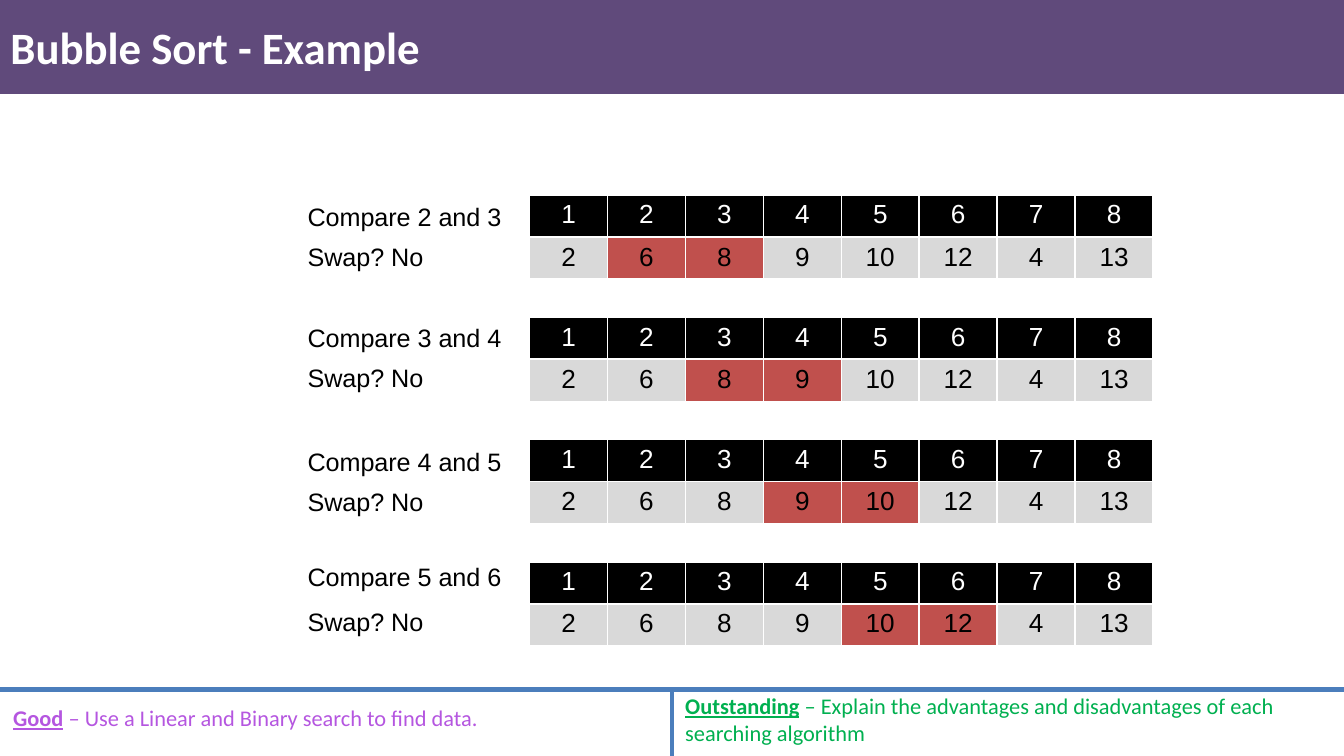
from pptx import Presentation
from pptx import util as u
from pptx.dml.color import RGBColor
from pptx.enum import shapes, text
from pptx.oxml import parse_xml
from pptx.oxml.ns import nsdecls

INDEXES = [1, 2, 3, 4, 5, 6, 7, 8]
VALUES = [2, 6, 8, 9, 10, 12, 4, 13]
# Tops of the "Compare" and "Swap?" labels for each step
LABEL_TOPS = [(1.45, 1.75), (2.35, 2.65), (3.27, 3.57), (4.13, 4.46)]
TABLE_TOP, TABLE_STEP = 1.45, 0.91


def color(code):
    return RGBColor.from_string(code)


class SlideBuilder:
    PURPLE, BLUE, BLACK, WHITE = "604A7B", "4B7EBC", "000000", "FFFFFF"
    GRAY, RED, VIOLET, GREEN = "D9D9D9", "C0504D", "B556E0", "00B050"
    HEADING_FONT, BODY_FONT = "Calibri", "Arial"

    def __init__(self, page):
        self.page = page

    def add_span(self, para, words, font, size, code, bold=False, underline=False):
        span = para.add_run()
        span.text = words
        span.font.name = font
        span.font.size = u.Pt(size)
        span.font.color.rgb = color(code)
        span.font.bold = bold
        span.font.underline = underline

    def add_text(self, left, top, width, height, spans, font, size, code,
                 anchor=text.MSO_ANCHOR.TOP, grow=True):
        """Add a text box; spans are (words, bold, underline) tuples."""
        box = self.page.shapes.add_textbox(
            u.Inches(left), u.Inches(top), u.Inches(width), u.Inches(height))
        frame = box.text_frame
        frame.word_wrap = True
        frame.vertical_anchor = anchor
        if grow:
            frame.auto_size = text.MSO_AUTO_SIZE.SHAPE_TO_FIT_TEXT
        for words, bold, underline in spans:
            self.add_span(frame.paragraphs[0], words, font, size, code, bold, underline)

    def add_goal(self, left, top, width, height, level, goal, code):
        spans = [(level, True, True), (f" – {goal}", False, False)]
        self.add_text(left, top, width, height, spans, self.HEADING_FONT, 12, code)

    def add_label(self, top, words):
        self.add_text(2.19, top, 1.75, 0.33, [(words, False, False)],
                      self.BODY_FONT, 13.5, self.BLACK)

    def add_bar(self, left, top, width, height, code):
        bar = self.page.shapes.add_shape(
            shapes.MSO_SHAPE.RECTANGLE,
            u.Inches(left), u.Inches(top), u.Inches(width), u.Inches(height))
        bar.shadow.inherit = False
        bar.fill.solid()
        bar.fill.fore_color.rgb = color(code)
        bar.line.fill.background()

    def add_line(self, x1, y1, x2, y2):
        line = self.page.shapes.add_connector(
            shapes.MSO_CONNECTOR.STRAIGHT,
            u.Inches(x1), u.Inches(y1), u.Inches(x2), u.Inches(y2))
        line.line.color.rgb = color(self.BLUE)
        line.line.width = u.Pt(2.25)
        line._element.spPr.append(parse_xml(f"<a:effectLst {nsdecls('a')}/>"))

    def style_cell(self, cell, words, fill, code):
        cell.margin_left = cell.margin_right = u.Inches(0.07)
        cell.margin_top = cell.margin_bottom = u.Inches(0.04)
        properties = cell._tc.get_or_add_tcPr()
        for side in ("lnL", "lnR", "lnT", "lnB"):
            properties.append(parse_xml(
                f'<a:{side} {nsdecls("a")} w="{u.Pt(1)}"><a:solidFill>'
                f'<a:srgbClr val="{self.WHITE}"/></a:solidFill></a:{side}>'))
        cell.fill.solid()
        cell.fill.fore_color.rgb = color(fill)
        para = cell.text_frame.paragraphs[0]
        para.alignment = text.PP_ALIGN.CENTER
        self.add_span(para, words, self.BODY_FONT, 14, code)

    def add_array(self, top, compared):
        """Add an index row over a value row, with the compared positions in red."""
        table = self.page.shapes.add_table(
            2, len(INDEXES), u.Inches(3.94), u.Inches(top),
            u.Inches(4.64), u.Inches(0.6)).table
        for column, (index, value) in enumerate(zip(INDEXES, VALUES)):
            table.columns[column].width = u.Inches(0.58)
            fill = self.RED if index in compared else self.GRAY
            self.style_cell(table.cell(0, column), str(index), self.BLACK, self.WHITE)
            self.style_cell(table.cell(1, column), str(value), fill, self.BLACK)


def main():
    deck = Presentation()
    deck.slide_width = u.Inches(10)
    deck.slide_height = deck.slide_width * 9 // 16
    slide = SlideBuilder(deck.slides.add_slide(deck.slide_layouts[6]))

    slide.add_goal(0, 5.19, 4.92, 0.3, "Good",
                   "Use a Linear and Binary search to find data.", slide.VIOLET)
    slide.add_line(0, 5.13, 10, 5.13)
    slide.add_line(5, 5.13, 5, 5.63)
    slide.add_goal(5, 5.1, 4.88, 0.5, "Outstanding",
                   "Explain the advantages and disadvantages of each searching algorithm",
                   slide.GREEN)
    slide.add_bar(0, 0, 10, 0.7, slide.PURPLE)
    slide.add_text(-0.02, 0.08, 10, 0.53, [("Bubble Sort - Example", True, False)],
                   slide.HEADING_FONT, 24, slide.WHITE,
                   anchor=text.MSO_ANCHOR.MIDDLE, grow=False)

    for step, (compare_top, swap_top) in enumerate(LABEL_TOPS):
        first, second = step + 2, step + 3
        slide.add_array(TABLE_TOP + step * TABLE_STEP, (first, second))
        slide.add_label(compare_top, f"Compare {first} and {second}")
        slide.add_label(swap_top, "Swap? No")

    deck.save("out.pptx")


if __name__ == "__main__":
    main()
